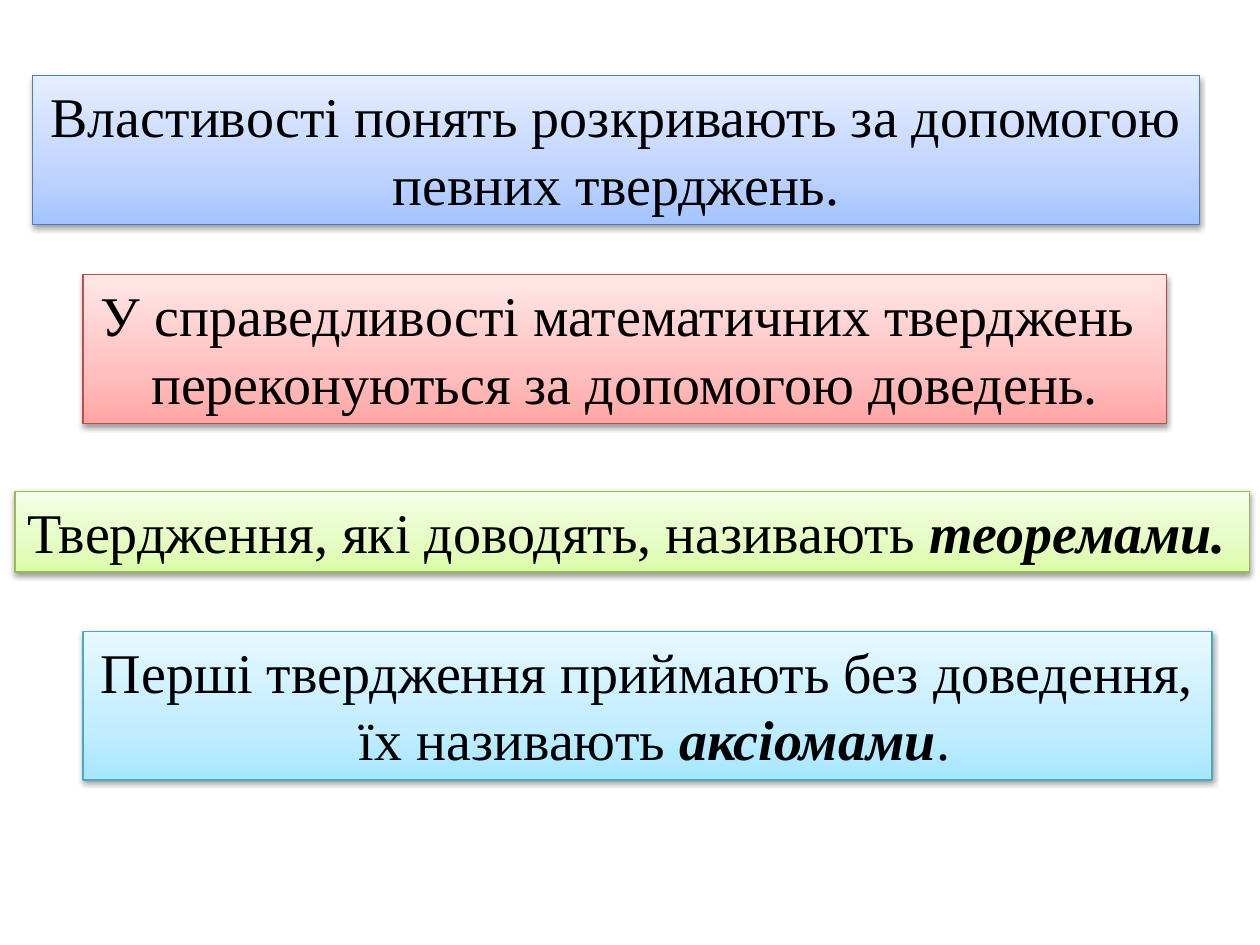
from dataclasses import dataclass

from lxml.etree import SubElement
from pptx import Presentation
from pptx.dml.color import RGBColor
from pptx.enum.text import MSO_AUTO_SIZE, PP_ALIGN
from pptx.oxml import parse_xml
from pptx.oxml.ns import nsdecls, qn
from pptx.shapes.autoshape import Shape
from pptx.slide import Slide
from pptx.text.text import _Paragraph
from pptx.util import Pt

PX = 914400 // 100
STOPS = (0, 35, 100)
COLORS = {
    "text": "000000",
    "shadow": "000000",
    "blue": ("4B7EBC", "A4C4FF", "BFD4FF", "E6EEFF"),
    "red": ("BF4C48", "FFA6A5", "FFC0BF", "FFE7E7"),
    "green": ("98B955", "DAFDA7", "E4FCC2", "F5FFE7"),
    "cyan": ("46AAC5", "A7E6FF", "C1EDFF", "E7F8FF"),
}


@dataclass(frozen=True)
class Term:
    text: str


@dataclass(frozen=True)
class Panel:
    left: int
    top: int
    width: int
    height: int
    color: str
    lines: tuple
    align: PP_ALIGN = PP_ALIGN.CENTER


PANELS = (
    Panel(26, 60, 926, 118, "blue", (
        ("Властивості понять розкривають за допомогою",),
        ("певних тверджень.",),
    )),
    Panel(66, 218, 860, 118, "red", (
        ("У справедливості математичних тверджень ",),
        ("переконуються за допомогою доведень.",),
    )),
    Panel(12, 390, 980, 64, "green", (
        ("Твердження, які доводять, називають ", Term("теоремами.")),
    ), PP_ALIGN.LEFT),
    Panel(66, 501, 896, 118, "cyan", (
        ("Перші твердження приймають без доведення,",),
        (" їх називають ", Term("аксіомами"), "."),
    )),
)


def write(para: _Paragraph, text: str, *, size: int = 32,
          face: str = "Times New Roman", color: str = "text",
          strong: bool = False) -> None:
    run = para.add_run()
    run.text = text
    font = run.font
    font.size, font.name = Pt(size), face
    font.bold = font.italic = strong
    font.color.rgb = RGBColor.from_string(COLORS[color])


def paint(box: Shape, color: str) -> None:
    edge, *shades = COLORS[color]
    box.fill.gradient()
    box.fill.gradient_angle = 90
    stops = box._element.spPr.find(".//" + qn("a:gsLst"))
    stops.clear()
    for pos, shade in zip(STOPS, shades):
        stop = SubElement(stops, qn("a:gs"), pos=str(pos * 1000))
        SubElement(stop, qn("a:srgbClr"), val=shade)
    box.line.color.rgb = RGBColor.from_string(edge)
    box.line.width = Pt(0.75)


def shade(box: Shape) -> None:
    box.shadow.inherit = False
    effects = box._element.spPr.find(qn("a:effectLst"))
    effects.append(parse_xml(
        f'<a:outerShdw {nsdecls("a")} blurRad="40000" dist="20000" '
        'dir="5400000" rotWithShape="0">'
        f'<a:srgbClr val="{COLORS["shadow"]}"><a:alpha val="38000"/>'
        '</a:srgbClr></a:outerShdw>'))


def draw(slide: Slide, panel: Panel) -> None:
    box = slide.shapes.add_textbox(
        panel.left * PX, panel.top * PX, panel.width * PX, panel.height * PX)
    paint(box, panel.color)
    shade(box)
    frame = box.text_frame
    frame.word_wrap = False
    frame.auto_size = MSO_AUTO_SIZE.SHAPE_TO_FIT_TEXT
    for row, line in enumerate(panel.lines):
        para = frame.add_paragraph() if row else frame.paragraphs[0]
        para.alignment = panel.align
        for part in line:
            if isinstance(part, Term):
                write(para, part.text, strong=True)
            else:
                write(para, part)


def main() -> None:
    deck = Presentation()
    deck.slide_width, deck.slide_height = 1000 * PX, 750 * PX
    slide = deck.slides.add_slide(deck.slide_layouts[6])
    for panel in PANELS:
        draw(slide, panel)
    deck.save("out.pptx")


if __name__ == "__main__":
    main()
